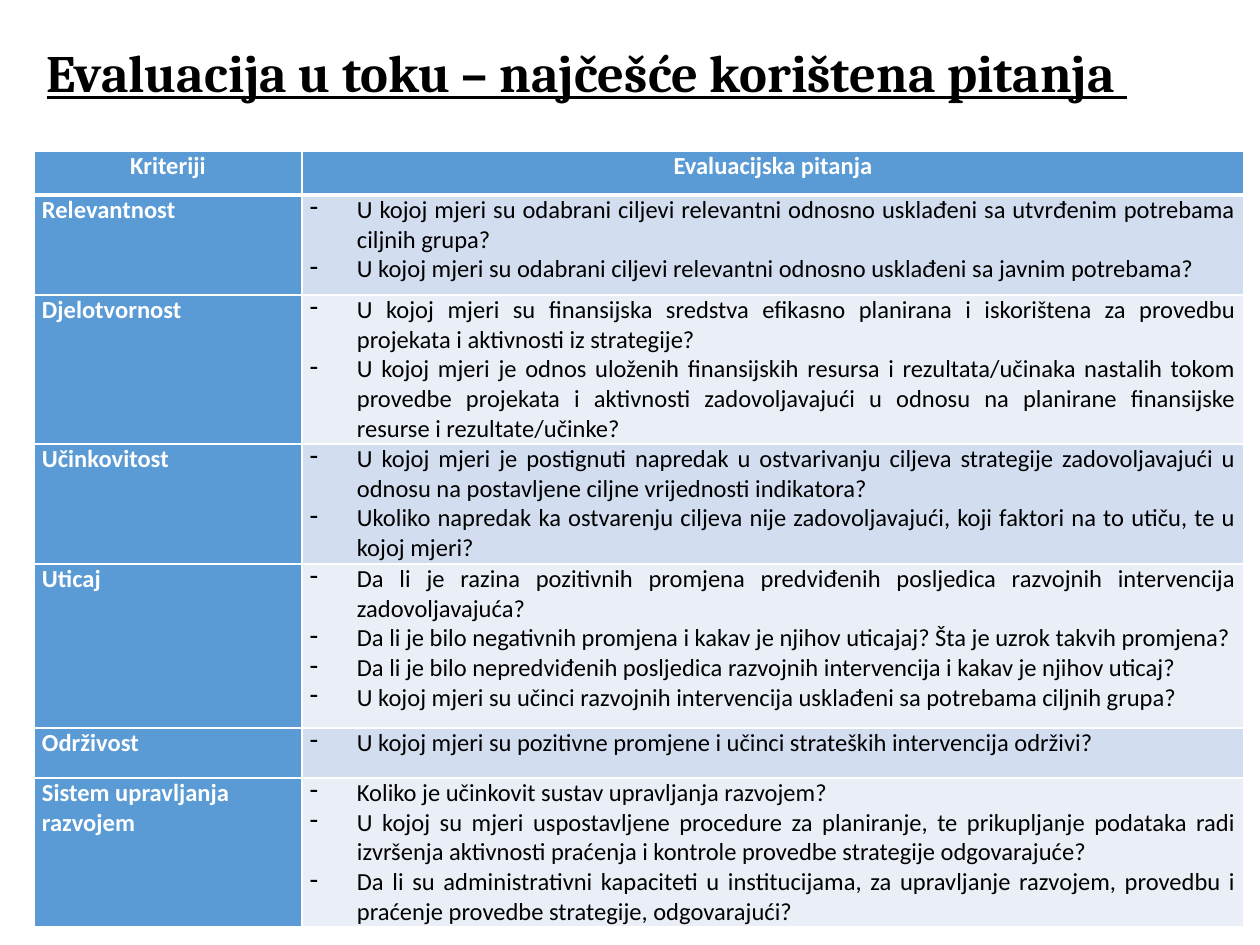
import pptx
import pptx.util
import pptx.dml.color
import pptx.enum.text
import pptx.oxml
import pptx.oxml.ns

# Content
TITLE = "Evaluacija u toku – najčešće korištena pitanja "
HEADERS = ("Kriteriji", "Evaluacijska pitanja")
CRITERIA = [
    ("Relevantnost", [
        "U kojoj mjeri su odabrani ciljevi relevantni odnosno usklađeni sa utvrđenim potrebama ciljnih grupa?",
        "U kojoj mjeri su odabrani ciljevi relevantni odnosno usklađeni sa javnim potrebama?",
    ]),
    ("Djelotvornost", [
        "U kojoj mjeri su finansijska sredstva efikasno planirana i iskorištena za provedbu projekata i aktivnosti iz strategije?",
        "U kojoj mjeri je odnos uloženih finansijskih resursa i rezultata/učinaka nastalih tokom provedbe projekata i aktivnosti zadovoljavajući u odnosu na planirane finansijske resurse i rezultate/učinke?",
    ]),
    ("Učinkovitost", [
        "U kojoj mjeri je postignuti napredak u ostvarivanju ciljeva strategije zadovoljavajući u odnosu na postavljene ciljne vrijednosti indikatora?",
        "Ukoliko napredak ka ostvarenju ciljeva nije zadovoljavajući, koji faktori na to utiču, te u kojoj mjeri?",
    ]),
    ("Uticaj", [
        "Da li je razina pozitivnih promjena predviđenih posljedica razvojnih intervencija zadovoljavajuća?",
        "Da li je bilo negativnih promjena i kakav je njihov uticajaj? Šta je uzrok takvih promjena?",
        "Da li je bilo nepredviđenih posljedica razvojnih intervencija i kakav je njihov uticaj?",
        "U kojoj mjeri su učinci razvojnih intervencija usklađeni sa potrebama ciljnih grupa?",
    ]),
    ("Održivost", [
        "U kojoj mjeri su pozitivne promjene i učinci strateških intervencija održivi?",
    ]),
    ("Sistem upravljanja razvojem", [
        "Koliko je učinkovit sustav upravljanja razvojem?",
        "U kojoj su mjeri uspostavljene procedure za planiranje, te prikupljanje podataka radi izvršenja aktivnosti praćenja i kontrole provedbe strategije odgovarajuće?",
        "Da li su administrativni kapaciteti u institucijama, za upravljanje razvojem, provedbu i praćenje provedbe strategije, odgovarajući?",
    ]),
]

# Layout in px, 126 to the inch
SLIDE = (1260, 945)
TITLE_BOX = (34, -16, 1192, 183)
TABLE_AT = (34, 151)
COLUMNS = (268, 942)
ROWS = (44, 100, 149, 120, 164, 50, 149)
CELL_INSET, BULLET_INDENT = 8, 47

THEME = {
    "title_font": "Cambria", "title_size": 30,
    "body_font": "Calibri", "body_size": 14, "space_after": 6,
    "text": "000000", "inverse": "FFFFFF", "border": "FFFFFF",
    "accent": "5B9BD5", "bands": ("D2DEEF", "EAEFF7"),
    "line": 1, "header_line": 3,
}
ALIGN = pptx.enum.text.PP_ALIGN


def px(n):
    return pptx.util.Emu(round(n * 914400 / 126))


def rgb(value):
    return pptx.dml.color.RGBColor.from_string(value)


def style_font(font, name, size, color, bold):
    font.name, font.size, font.bold = name, pptx.util.Pt(size), bold
    font.color.rgb = rgb(color)


def set_borders(cell, widths):
    tcPr = cell._tc.get_or_add_tcPr()
    for side, width in zip("LRTB", widths):
        tcPr.append(pptx.oxml.parse_xml(
            f'<a:ln{side} {pptx.oxml.ns.nsdecls("a")} w="{pptx.util.Pt(width)}">'
            f'<a:solidFill><a:srgbClr val="{THEME["border"]}"/></a:solidFill></a:ln{side}>'))


def add_bullet(p):
    pPr = p._p.get_or_add_pPr()
    pPr.set("marL", str(px(BULLET_INDENT)))
    pPr.set("indent", str(-px(BULLET_INDENT)))
    pPr.append(pptx.oxml.parse_xml(f'<a:buChar {pptx.oxml.ns.nsdecls("a")} char="-"/>'))


def fill_cell(cell, lines, fill, color, align, bold=True, bullets=False, borders=(THEME["line"],) * 4):
    set_borders(cell, borders)
    cell.fill.solid()
    cell.fill.fore_color.rgb = rgb(fill)
    cell.margin_left = cell.margin_right = px(CELL_INSET)
    cell.margin_top = cell.margin_bottom = 0
    tf = cell.text_frame
    tf.text = "\n".join(lines)
    for i, p in enumerate(tf.paragraphs, 1):
        p.alignment = align
        p.space_after = pptx.util.Pt(THEME["space_after"] if i == len(lines) else 0)
        if bullets:
            add_bullet(p)
        style_font(p.runs[0].font, THEME["body_font"], THEME["body_size"], color, bold)


def add_title(slide):
    sp = slide.shapes.title
    sp.left, sp.top, sp.width, sp.height = map(px, TITLE_BOX)
    tf = sp.text_frame
    tf.text = TITLE
    tf.word_wrap = True
    tf.auto_size = pptx.enum.text.MSO_AUTO_SIZE.NONE
    tf.vertical_anchor = pptx.enum.text.MSO_ANCHOR.MIDDLE
    p = tf.paragraphs[0]
    p.alignment, p.line_spacing = ALIGN.LEFT, 0.9
    font = p.runs[0].font
    style_font(font, THEME["title_font"], THEME["title_size"], THEME["text"], True)
    font.underline = True


def add_criteria_table(slide):
    table = slide.shapes.add_table(len(ROWS), len(COLUMNS), *map(px, TABLE_AT),
                                   px(sum(COLUMNS)), px(sum(ROWS))).table
    for column, width in zip(table.columns, COLUMNS):
        column.width = px(width)
    for row, height in zip(table.rows, ROWS):
        row.height = px(height)

    # Header row with a thicker line below
    thin, thick = THEME["line"], THEME["header_line"]
    for c, header in enumerate(HEADERS):
        fill_cell(table.cell(0, c), [header], THEME["accent"], THEME["inverse"],
                  ALIGN.CENTER, borders=(thin, thin, thin, thick))

    # One banded row per criterion
    for r, (criterion, questions) in enumerate(CRITERIA, 1):
        top = thick if r == 1 else thin
        borders = (thin, thin, top, thin)
        align = ALIGN.LEFT if r == len(CRITERIA) else ALIGN.JUSTIFY
        fill_cell(table.cell(r, 0), [criterion], THEME["accent"], THEME["inverse"],
                  align, borders=borders)
        fill_cell(table.cell(r, 1), questions, THEME["bands"][(r - 1) % 2], THEME["text"],
                  ALIGN.JUSTIFY, bold=False, bullets=True, borders=borders)


def main():
    prs = pptx.Presentation()
    prs.slide_width, prs.slide_height = map(px, SLIDE)
    slide = prs.slides.add_slide(prs.slide_layouts[5])
    add_title(slide)
    add_criteria_table(slide)
    prs.save("out.pptx")


if __name__ == "__main__":
    main()
